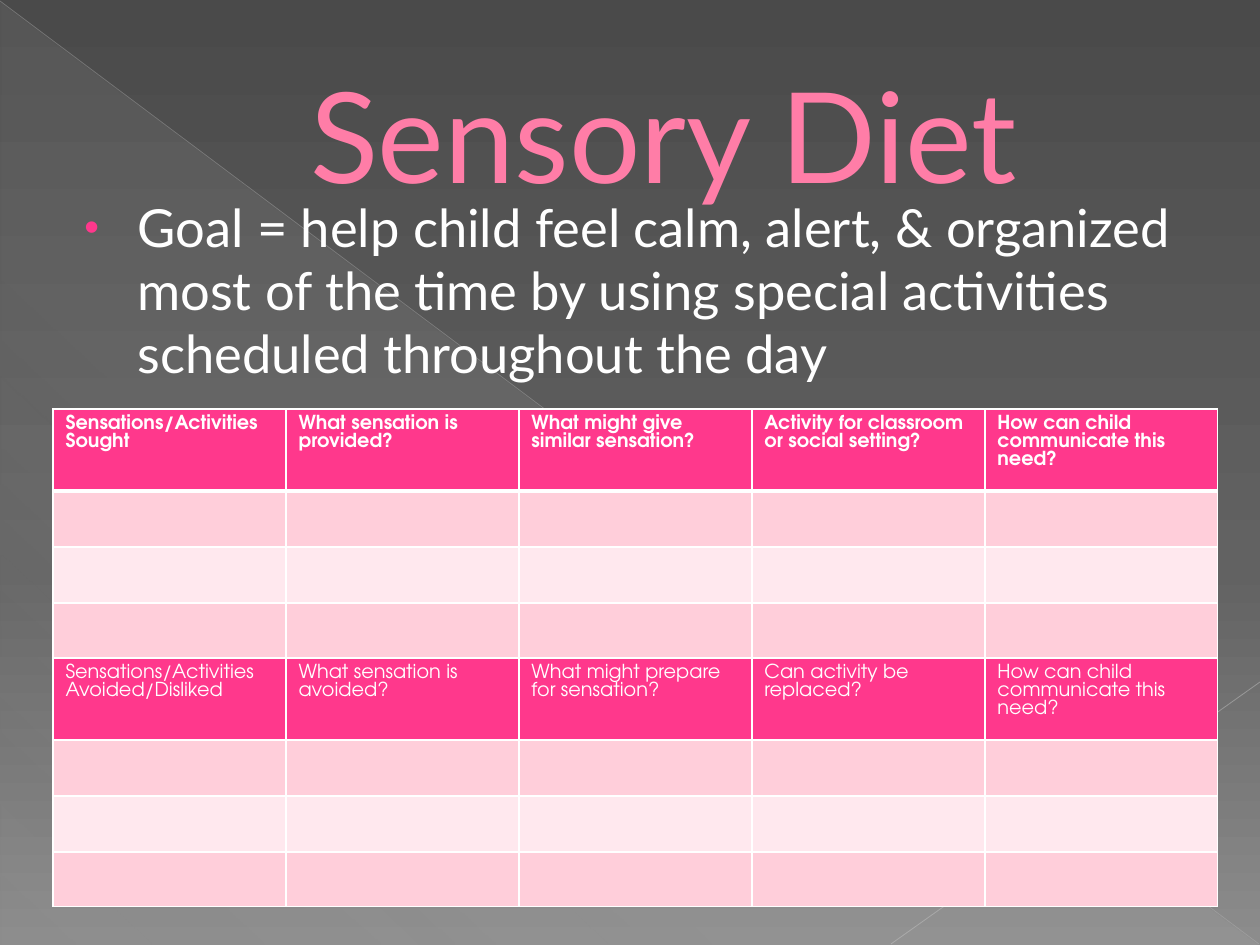
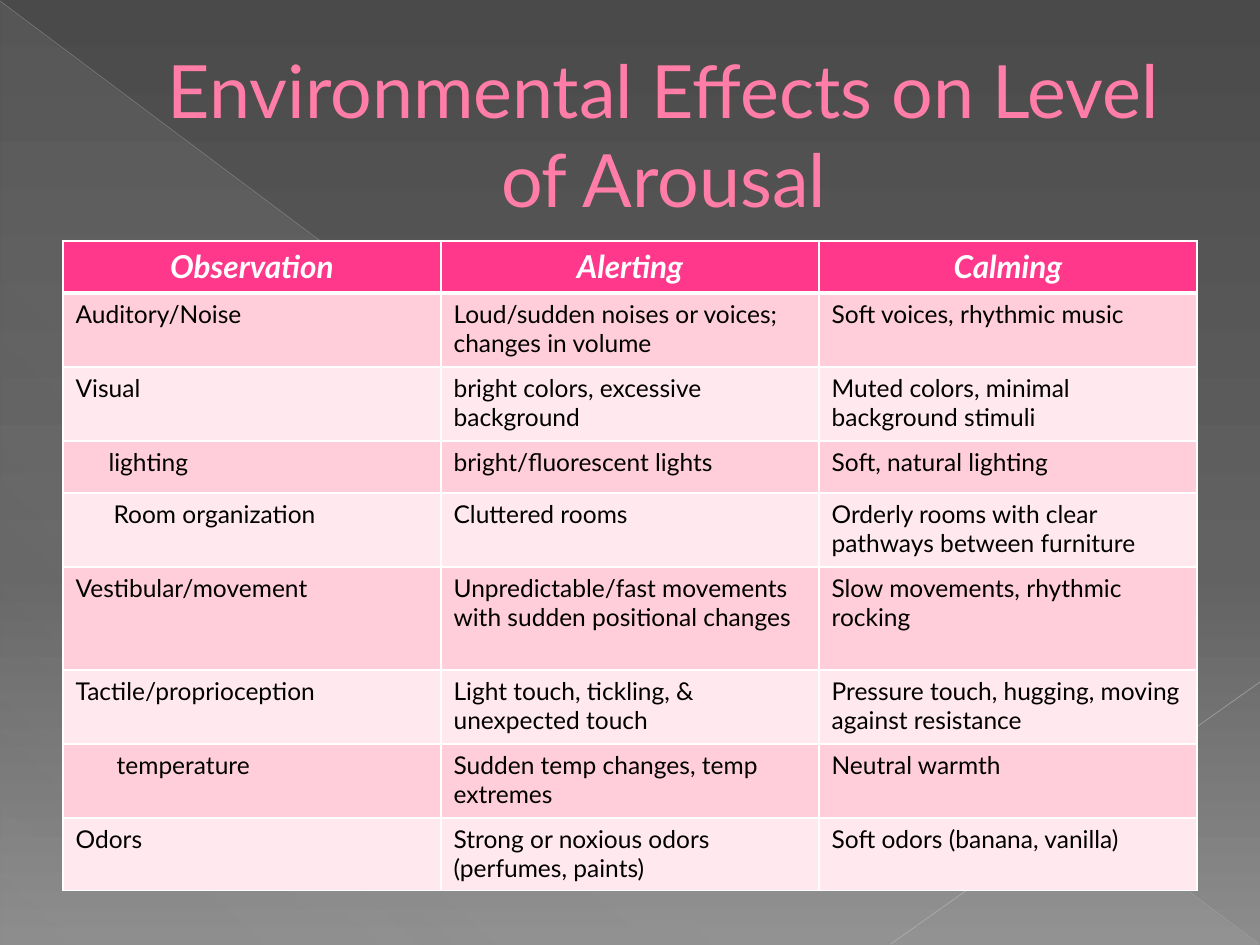
import pptx
import pptx.dml.color
import pptx.enum.shapes
import pptx.enum.text
import pptx.oxml.ns
import pptx.util
from lxml import etree

SCALE = 914400 / 126
COLORS = {
    "title": "FF7DA7", "accent": "FF388C", "band": "FFCEDA", "light_band": "FFE8EE",
    "white": "FFFFFF", "black": "000000", "triangle": "D2D2D2",
    "diagonal": "BFBFBF", "corner": "C6C6C6",
    "top": "4A4A4A", "middle": "626262", "bottom": "8C8C8C",
}
BODY_FONT = "Lato"
HEADING_FONT = "TeX Gyre Adventor"
ALIGN = pptx.enum.text.PP_ALIGN
qn = pptx.oxml.ns.qn


def write_text(frame, text, size, color="white", font=BODY_FONT, bold=False,
               italic=False, align=ALIGN.LEFT, margin=0, indent=0, bullet=None):
    paragraph = frame.paragraphs[0]
    paragraph.alignment = align
    properties = paragraph._p.get_or_add_pPr()
    properties.set("marL", str(round(margin * SCALE)))
    properties.set("indent", str(round(indent * SCALE)))
    if bullet:
        bullet_color = etree.SubElement(properties, qn("a:buClr"))
        etree.SubElement(bullet_color, qn("a:srgbClr"), val=COLORS["accent"])
        etree.SubElement(properties, qn("a:buSzPct"), val="80000")
        etree.SubElement(properties, qn("a:buFont"), typeface="Arial")
        etree.SubElement(properties, qn("a:buChar"), char=bullet)
    run = paragraph.add_run()
    run.text = text
    run.font.size = pptx.util.Pt(size)
    run.font.name = font
    run.font.bold = bold
    run.font.italic = italic
    run.font.color.rgb = pptx.dml.color.RGBColor.from_string(COLORS[color])


def set_gradient(fill, element, angle, stops):
    fill.gradient()
    fill.gradient_angle = 360 - angle
    stop_list = next(element.iter(qn("a:gsLst")))
    for old_stop in list(stop_list):
        stop_list.remove(old_stop)
    for position, color, opacity in stops:
        stop = etree.SubElement(stop_list, qn("a:gs"), pos=str(position * 1000))
        stop_color = etree.SubElement(stop, qn("a:srgbClr"), val=COLORS[color])
        if opacity < 100:
            etree.SubElement(stop_color, qn("a:alpha"), val=str(opacity * 1000))


BACKGROUND_LINES = [
    ((0, 1, 1259, 944), "diagonal", 0.39, 35),
    ((1260, 682, 891, 944), "corner", 0.47, 45),
]

sensory_rows = [
    ["Sensations/Activities Sought", "What sensation is provided?",
     "What might give similar sensation?", "Activity for classroom or social setting?",
     "How can child communicate this need?"],
    *[[""] * 5] * 3,
    ["Sensations/Activities Avoided/Disliked", "What sensation is avoided?",
     "What might prepare for sensation?", "Can activity be replaced?",
     "How can child communicate this need?"],
    *[[""] * 5] * 3,
]
arousal_rows = [
    ["Observation", "Alerting", "Calming"],
    ["Auditory/Noise", "Loud/sudden noises or voices; changes in volume",
     "Soft voices, rhythmic music"],
    ["Visual", "bright colors, excessive background", "Muted colors, minimal background stimuli"],
    ["lighting", "bright/fluorescent lights", "Soft, natural lighting"],
    ["Room organization", "Cluttered rooms",
     "Orderly rooms with clear pathways between furniture"],
    ["Vestibular/movement", "Unpredictable/fast movements with sudden positional changes",
     "Slow movements, rhythmic rocking"],
    ["Tactile/proprioception", "Light touch, tickling, & unexpected touch",
     "Pressure touch, hugging, moving against resistance"],
    ["temperature", "Sudden temp changes, temp extremes", "Neutral warmth"],
    ["Odors", "Strong or noxious odors (perfumes, paints)", "Soft odors (banana, vanilla)"],
]
SUBTOPIC_MARGINS = {"lighting": 33, "Room organization": 38, "temperature": 41}

SLIDES = [
    {"title": "Sensory Diet", "title_size": 72,
     "goal": "Goal = help child feel calm, alert, & organized most of the time "
             "by using special activities scheduled throughout the day",
     "rows": sensory_rows, "left": 53, "top": 409, "column_width": 233,
     "heights": [79, 56, 56, 55] * 2, "heading_rows": [0, 4],
     "heading": {"size": 11, "font": HEADING_FONT}},
    {"title": "Environmental Effects on Level of Arousal", "title_size": 42,
     "rows": arousal_rows, "left": 63, "top": 241, "column_width": 378,
     "heights": [52, 74, 74, 52, 74, 103, 74, 74, 73], "heading_rows": [0],
     "heading": {"size": 18, "italic": True, "align": ALIGN.CENTER}},
]

presentation = pptx.Presentation()
presentation.slide_width = round(1260 * SCALE)
presentation.slide_height = round(945 * SCALE)

for content in SLIDES:
    slide = presentation.slides.add_slide(presentation.slide_layouts[6])
    set_gradient(slide.background.fill, slide.element, 90,
                 [(0, "top", 100), (60, "middle", 100), (100, "bottom", 100)])

    triangle = slide.shapes.add_shape(
        pptx.enum.shapes.MSO_SHAPE.RIGHT_TRIANGLE,
        *[round(length * SCALE) for length in (1, 2, 1258, 943)])
    triangle.shadow.inherit = False
    triangle.line.fill.background()
    set_gradient(triangle.fill, triangle.element, 133,
                 [(0, "triangle", 10), (70, "triangle", 8), (100, "triangle", 1)])

    for ends, color, width, opacity in BACKGROUND_LINES:
        connector = slide.shapes.add_connector(
            pptx.enum.shapes.MSO_CONNECTOR.STRAIGHT,
            *[round(length * SCALE) for length in ends])
        connector.line.width = pptx.util.Pt(width)
        connector.line.color.rgb = pptx.dml.color.RGBColor.from_string(COLORS[color])
        line_color = next(connector.element.iter(qn("a:srgbClr")))
        etree.SubElement(line_color, qn("a:alpha"), val=str(opacity * 1000))
        etree.SubElement(connector.element.spPr, qn("a:effectLst"))

    title = slide.shapes.add_textbox(
        *[round(length * SCALE) for length in (63, 37, 1134, 193)])
    title.text_frame.word_wrap = True
    title.text_frame.vertical_anchor = pptx.enum.text.MSO_ANCHOR.MIDDLE
    write_text(title.text_frame, content["title"], content["title_size"],
               color="title", align=ALIGN.CENTER, margin=67)

    if "goal" in content:
        goal = slide.shapes.add_textbox(
            *[round(length * SCALE) for length in (63, 189, 1134, 210)])
        goal.text_frame.word_wrap = True
        write_text(goal.text_frame, content["goal"], 30, margin=62, indent=-53, bullet="•")

    rows = content["rows"]
    table_box = (content["left"], content["top"],
                 content["column_width"] * len(rows[0]), sum(content["heights"]))
    table = slide.shapes.add_table(
        len(rows), len(rows[0]), *[round(length * SCALE) for length in table_box]).table
    table.horz_banding = False
    for column in table.columns:
        column.width = round(content["column_width"] * SCALE)

    band_index = 0
    for row_index, texts in enumerate(rows):
        table.rows[row_index].height = round(content["heights"][row_index] * SCALE)
        is_heading = row_index in content["heading_rows"]
        if is_heading:
            row_color, band_index = "accent", 0
        else:
            row_color = ("band", "light_band")[band_index % 2]
            band_index += 1
        for column_index, text in enumerate(texts):
            cell = table.cell(row_index, column_index)
            cell.fill.solid()
            cell.fill.fore_color.rgb = pptx.dml.color.RGBColor.from_string(COLORS[row_color])
            cell_properties = cell._tc.get_or_add_tcPr()
            for position, side in enumerate(("L", "R", "T", "B")):
                is_thick = (row_index, side) in ((0, "B"), (1, "T"))
                border = etree.Element(
                    qn(f"a:ln{side}"), w=str(pptx.util.Pt(3 if is_thick else 1)))
                border_fill = etree.SubElement(border, qn("a:solidFill"))
                etree.SubElement(border_fill, qn("a:srgbClr"), val=COLORS["white"])
                cell_properties.insert(position, border)
            if is_heading:
                write_text(cell.text_frame, text, bold=row_index == 0, **content["heading"])
            elif text:
                write_text(cell.text_frame, text, 14, color="black",
                           margin=SUBTOPIC_MARGINS.get(text, 0))

presentation.save("out.pptx")
